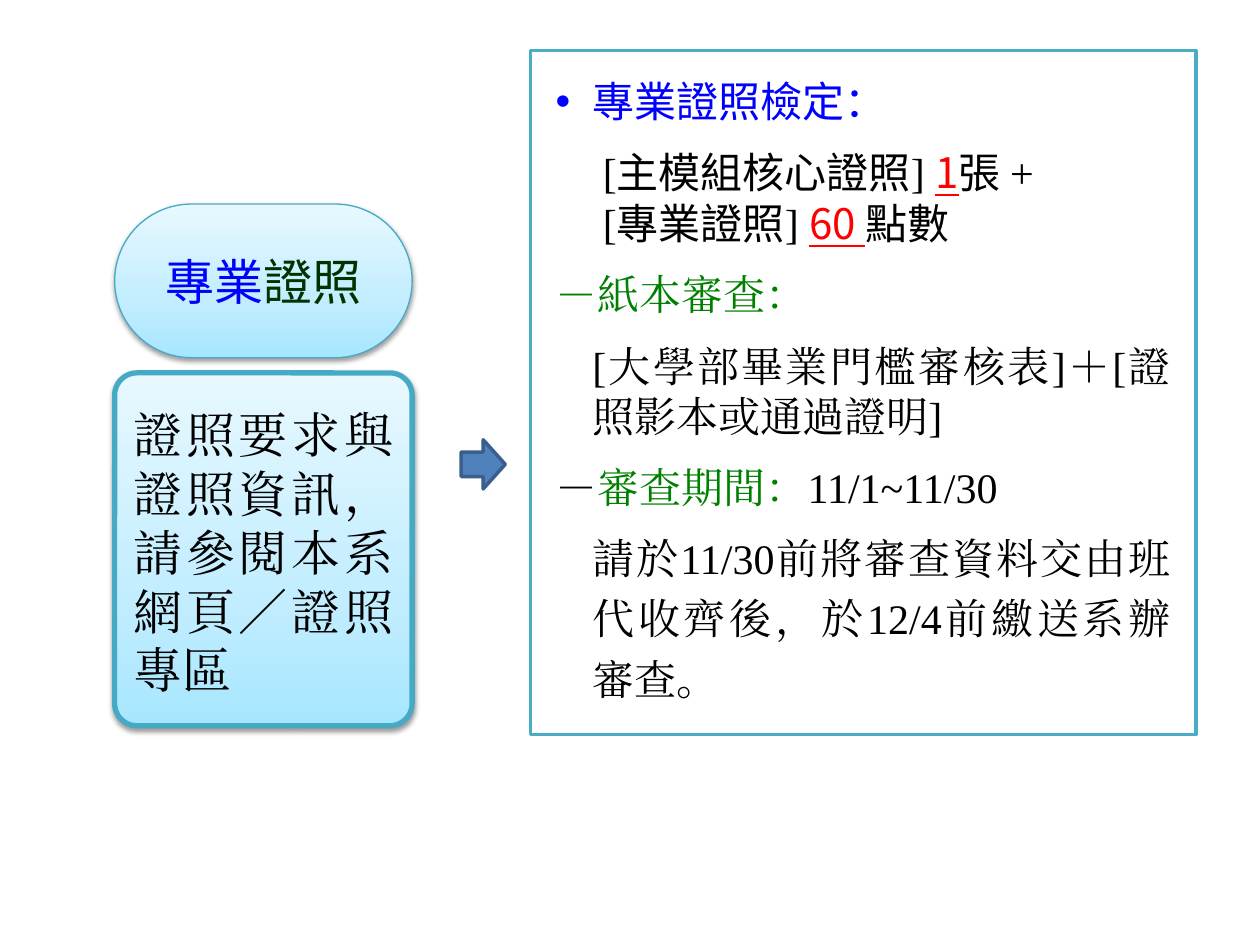
"""Build the slide on professional certificate requirements."""
from dataclasses import dataclass

from lxml import etree
from pptx import Presentation
from pptx.dml.color import RGBColor
from pptx.enum.shapes import MSO_SHAPE
from pptx.enum.text import MSO_ANCHOR, PP_ALIGN
from pptx.oxml import parse_xml
from pptx.oxml.ns import nsdecls, qn
from pptx.util import Pt

ROUNDED, BOX, ARROW = MSO_SHAPE.ROUNDED_RECTANGLE, MSO_SHAPE.RECTANGLE, MSO_SHAPE.RIGHT_ARROW
JUSTIFY, LEFT, CENTER = PP_ALIGN.JUSTIFY, PP_ALIGN.LEFT, PP_ALIGN.CENTER
TOP, MIDDLE = MSO_ANCHOR.TOP, MSO_ANCHOR.MIDDLE


@dataclass(frozen=True)
class Theme:
    serif: str = "Times New Roman"
    sans: str = "Noto Sans CJK SC"
    heading: int = 28
    body: int = 24
    black: str = "000000"
    blue: str = "0000FF"
    red: str = "FF0000"
    green: str = "008000"
    dark_green: str = "003300"
    arrow_fill: str = "4F81BD"
    arrow_line: str = "3A5F8C"
    card_line: str = "46AAC5"
    panel_line: str = "4BACC6"
    gradient: tuple = ((0, "A7E6FF"), (35, "C1EDFF"), (100, "E7F8FF"))


class SlideBuilder:
    def __init__(self, slide, theme):
        self.slide = slide
        self.theme = theme

    def shape(self, kind, bounds, line, width, fill=None):
        shape = self.slide.shapes.add_shape(kind, *map(Pt, bounds))
        shape.shadow.inherit = False
        if fill:
            shape.fill.solid()
            shape.fill.fore_color.rgb = RGBColor.from_string(fill)
        else:
            shape.fill.background()
        shape.line.color.rgb = RGBColor.from_string(line)
        shape.line.width = Pt(width)
        return shape

    def card(self, bounds, corner, width):
        card = self.shape(ROUNDED, bounds, self.theme.card_line, width)
        card.adjustments[0] = corner
        properties = card.element.spPr
        stops = "".join(
            f'<a:gs pos="{position * 1000}"><a:srgbClr val="{color}"/></a:gs>'
            for position, color in self.theme.gradient)
        gradient = parse_xml(
            f'<a:gradFill {nsdecls("a")} rotWithShape="1"><a:gsLst>{stops}</a:gsLst>'
            '<a:lin ang="16200000" scaled="1"/></a:gradFill>')
        properties.replace(properties.find(qn("a:noFill")), gradient)
        properties.find(qn("a:effectLst")).append(parse_xml(
            f'<a:outerShdw {nsdecls("a")} blurRad="{Pt(3.1)}" dist="{Pt(1.6)}" dir="5400000" '
            'rotWithShape="0"><a:srgbClr val="000000"><a:alpha val="38000"/></a:srgbClr>'
            '</a:outerShdw>'))
        return card

    def frame(self, shape, insets, anchor=TOP, wrap=True):
        frame = shape.text_frame
        frame.word_wrap = wrap
        frame.vertical_anchor = anchor
        frame.margin_left, frame.margin_top, frame.margin_right, frame.margin_bottom = map(Pt, insets)
        return frame

    def paragraph(self, frame, lines, size, align, margin=0, indent=0, before=0,
                  spacing=None, bullet=None):
        first = not frame.text
        paragraph = frame.paragraphs[0] if first else frame.add_paragraph()
        properties = paragraph._p.get_or_add_pPr()
        properties.set("marL", str(Pt(margin)))
        properties.set("indent", str(Pt(indent)))
        if bullet:
            etree.SubElement(properties, qn("a:buFont"), typeface="Arial")
            etree.SubElement(properties, qn("a:buChar"), char=bullet)
        paragraph.alignment = align
        if not first:
            paragraph.space_before = Pt(before)
        if spacing:
            paragraph.line_spacing = spacing
        for number, line in enumerate(lines):
            if number:
                paragraph.add_line_break()
            for text, color, latin, asian, underline in line:
                run = paragraph.add_run()
                run.text = text
                run.font.size = Pt(size)
                run.font.name = latin
                run.font.underline = underline
                run.font.color.rgb = RGBColor.from_string(color)
                etree.SubElement(run._r.get_or_add_rPr(), qn("a:ea"), typeface=asian)


def main():
    theme = Theme()
    presentation = Presentation()
    presentation.slide_width, presentation.slide_height = Pt(720), Pt(540)
    builder = SlideBuilder(presentation.slides.add_slide(presentation.slide_layouts[6]), theme)

    def plain(text, color=theme.black):
        return text, color, theme.serif, theme.serif, False

    def mixed(text, color=theme.black):
        return text, color, theme.serif, theme.sans, False

    def count(text):
        return text, theme.red, theme.sans, theme.sans, True

    builder.shape(ARROW, (263.5, 251.3, 25.2, 28.1), theme.arrow_line, 2, theme.arrow_fill)

    guidance = builder.frame(builder.card((65.5, 213.1, 170, 201.6), 0.075, 3), (7.2, 14.4, 7.2, 3.6))
    builder.paragraph(guidance, [[plain("證照要求與證照資訊，請參閱本系網頁／證照專區")]],
                      theme.heading, JUSTIFY)

    title = builder.frame(builder.card((65.5, 116.6, 170, 87.8), 0.5, 0.75),
                          (7.2, 3.6, 7.2, 3.6), MIDDLE, False)
    builder.paragraph(title, [[mixed("專業", theme.blue), mixed("證照", theme.dark_green)]],
                      theme.heading, CENTER)

    panel = builder.shape(BOX, (303.1, 28.8, 380.2, 391), theme.panel_line, 2)
    details = builder.frame(panel, (14.4,) * 4)
    items = (
        ([[mixed("專業證照檢定：", theme.blue)]], JUSTIFY, 21, -21, 12, None, "•"),
        ([[mixed("[主模組核心證照] "), count("1"), mixed("張 "), plain("+")],
          [mixed("[專業證照] "), count("60 "), mixed("點數")]], LEFT, 27, 0, 12, None, None),
        ([[plain("－紙本審查：", theme.green)]], JUSTIFY, 21, -21, 12, None, None),
        ([[plain("[大學部畢業門檻審核表]＋[證照影本或通過證明]")]], JUSTIFY, 21, 0, 12, None, None),
        ([[plain("－"), plain("審查期間：", theme.green), plain("11/1~11/30")]],
         JUSTIFY, 27, -33, 6, 1.2, None),
        ([[plain("請於11/30前將審查資料交由班代收齊後，於12/4前繳送系辦審查。")]],
         JUSTIFY, 21, 0, 6, 1.2, None),
    )
    for lines, *layout in items:
        builder.paragraph(details, lines, theme.body, *layout)

    presentation.save("out.pptx")


if __name__ == "__main__":
    main()
